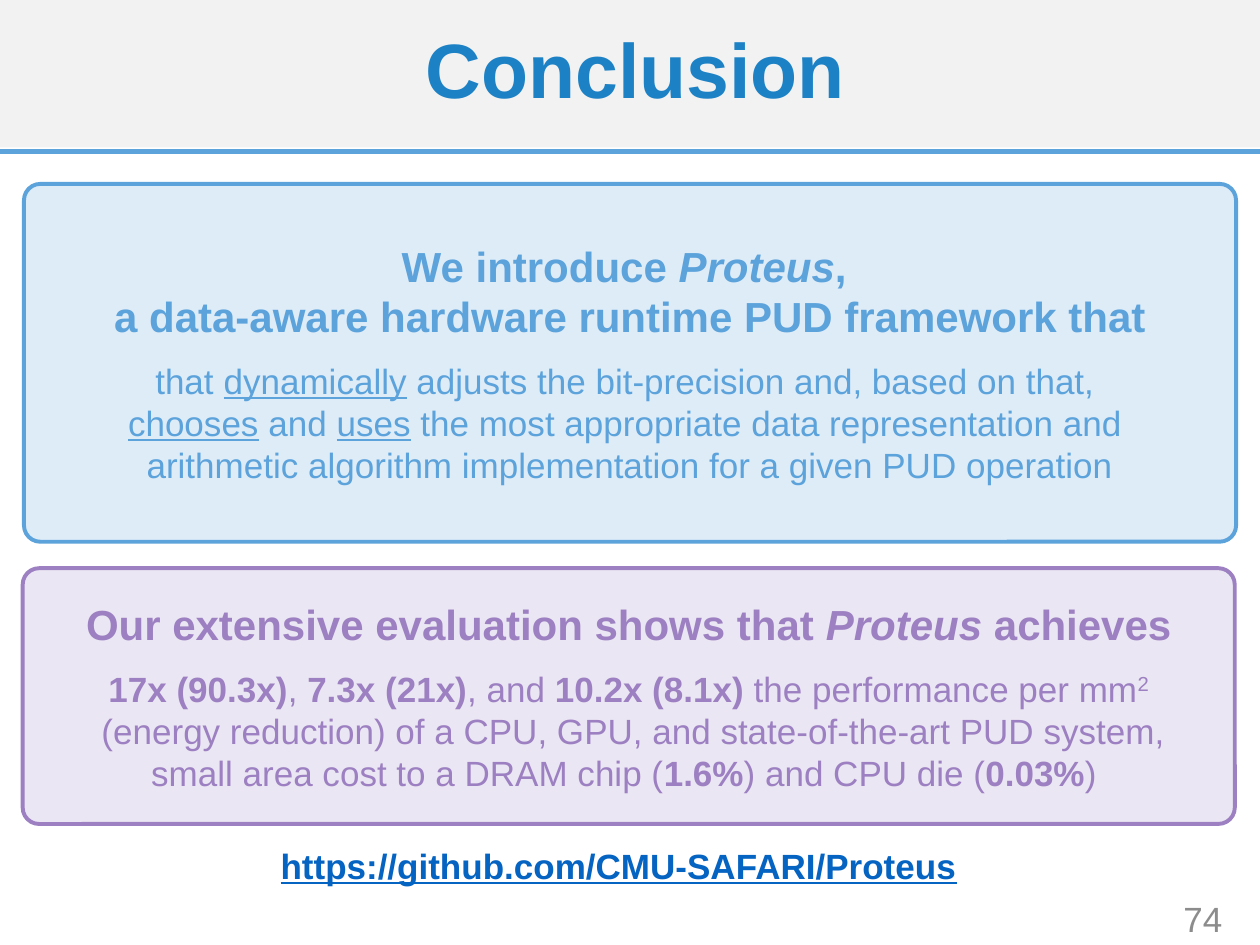
from pptx import Presentation
from pptx import util as u
from pptx.dml.color import RGBColor
from pptx.enum import shapes, text
from pptx.oxml import parse_xml
from pptx.oxml.ns import nsdecls

BLUE, PURPLE, LINK = "5CA2DB", "9C80C1", "0563C1"

INTRO_HEAD = [("We introduce ", "b"), ("Proteus", "bi"),
              (", \na data-aware hardware runtime PUD framework that", "b")]
INTRO_BODY = [("that ", ""), ("dynamically", "u"),
              (" adjusts the bit-precision and, based on that, \n", ""),
              ("chooses", "u"), (" and ", ""), ("uses", "u"),
              (" the most appropriate data representation and \n"
               "arithmetic algorithm implementation for a given PUD operation", "")]
RESULT_HEAD = [("Our extensive evaluation shows that ", "b"), ("Proteus", "bi"),
               (" achieves", "b")]
RESULT_BODY = [("17x (90.3x)", "b"), (", ", ""), ("7.3x (21x)", "b"), (", and ", ""),
               ("10.2x (8.1x)", "b"), (" the performance per mm", ""), ("2", "^"),
               ("\n (energy reduction) of a CPU, GPU, and state-of-the-art PUD system,\n"
                "small area cost to a DRAM chip (", ""),
               ("1.6%", "b"), (") and CPU die (", ""), ("0.03%", "b"), (") ", "")]


def color(value):
    return RGBColor.from_string(value)


def inches(box):
    return [u.Inches(length) for length in box]


def add_run(paragraph, content, style, size, ink):
    for index, line in enumerate(content.split("\n")):
        if index:
            paragraph.add_line_break()
        if not line:
            continue
        run = paragraph.add_run()
        run.text = line
        font = run.font
        font.name, font.size = "Arial", u.Pt(size)
        font.bold, font.italic, font.underline = (mark in style for mark in "biu")
        font.color.rgb = color(ink)
        if "^" in style:
            run._r.get_or_add_rPr().set("baseline", "30000")


def write(paragraph, runs, size, ink, align=text.PP_ALIGN.CENTER):
    paragraph.alignment = align
    for content, style in runs:
        add_run(paragraph, content, style, size, ink)


def add_header(slide, box):
    left, top, width, height = box
    band = slide.shapes.add_shape(shapes.MSO_SHAPE.RECTANGLE, *inches(box))
    band.shadow.inherit = False
    band.fill.solid()
    band.fill.fore_color.rgb = color("F2F2F2")
    band.line.fill.background()

    rule_y = top + height + 0.03
    rule = slide.shapes.add_connector(
        shapes.MSO_CONNECTOR.STRAIGHT, *inches((left, rule_y, left + width, rule_y)))
    rule.line.color.rgb = color(BLUE)
    rule.line.width = u.Pt(3)
    rule._element.spPr.append(parse_xml(f"<a:effectLst {nsdecls('a')}/>"))

    title = slide.shapes.title
    title.left, title.top, title.width, title.height = inches(
        (left + 0.18, top, width - 0.27, height))
    title.text_frame.vertical_anchor = text.MSO_ANCHOR.MIDDLE
    paragraph = title.text_frame.paragraphs[0]
    paragraph.line_spacing = 0.9
    write(paragraph, [("Conclusion", "b")], 44, "1D82C5")
    slide.shapes._spTree.append(title._element)


def add_panel(slide, box, fill, ink, corner, head, body):
    panel = slide.shapes.add_shape(shapes.MSO_SHAPE.ROUNDED_RECTANGLE, *inches(box))
    panel.adjustments[0] = corner / box[3]
    panel.shadow.inherit = False
    panel.fill.solid()
    panel.fill.fore_color.rgb = color(fill)
    panel.line.color.rgb = color(ink)
    panel.line.width = u.Pt(2.25)
    frame = panel.text_frame
    frame.word_wrap = True
    frame.vertical_anchor = text.MSO_ANCHOR.MIDDLE
    write(frame.paragraphs[0], head, 24, ink)
    paragraph = frame.add_paragraph()
    paragraph.space_before = u.Pt(10.3)
    write(paragraph, body, 20, ink)


def add_label(slide, box, content, style, ink, align, anchor):
    frame = slide.shapes.add_textbox(*inches(box)).text_frame
    frame.word_wrap = True
    frame.vertical_anchor = anchor
    write(frame.paragraphs[0], [(content, style)], 20, ink, align)


def main():
    presentation = Presentation()
    presentation.slide_width, presentation.slide_height = inches((10, 7.5))
    slide = presentation.slides.add_slide(presentation.slide_layouts[5])
    add_header(slide, (0, 0, 10, 1.17))
    add_label(slide, (8.72, 7.09, 1.08, 0.4), "74", "", "8C8C8C",
              text.PP_ALIGN.RIGHT, text.MSO_ANCHOR.MIDDLE)
    add_label(slide, (-0.09, 6.65, 10, 0.44), "https://github.com/CMU-SAFARI/Proteus",
              "bu", LINK, text.PP_ALIGN.CENTER, text.MSO_ANCHOR.TOP)
    add_panel(slide, (0.19, 1.46, 9.62, 2.84), "DEECF8", BLUE, 0.13,
              INTRO_HEAD, INTRO_BODY)
    add_panel(slide, (0.18, 4.51, 9.62, 2.03), "EBE6F3", PURPLE, 0.13,
              RESULT_HEAD, RESULT_BODY)
    presentation.save("out.pptx")


if __name__ == "__main__":
    main()
